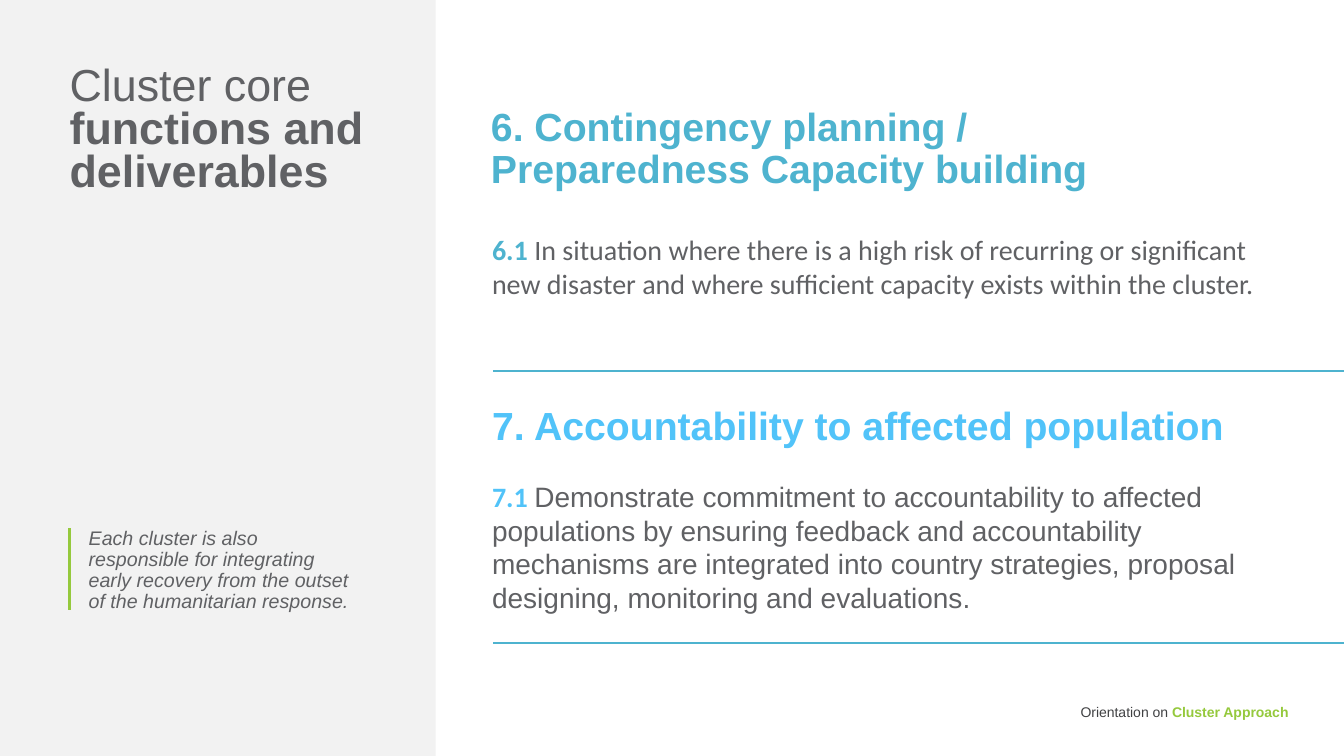
from lxml.etree import SubElement
from pptx import Presentation
from pptx.dml.color import RGBColor
from pptx.enum.shapes import MSO_CONNECTOR as Connector, MSO_SHAPE as Shape
from pptx.enum.text import MSO_ANCHOR as Anchor, MSO_AUTO_SIZE as AutoSize, PP_ALIGN as Align
from pptx.oxml.ns import qn
from pptx.util import Inches, Pt

TEAL, SKY, GREEN, GRAY, DARK = "4EB3CF", "51C3F9", "95C93D", "606164", "404143"


def color(value):
    return RGBColor.from_string(value)


def write(box, place, runs, size, spacing=1.0, anchor=Anchor.TOP,
          align=Align.LEFT, insets=(0, 0.05, 0.1, 0.05), wrap=True):
    box.left, box.top, box.width, box.height = [Inches(length) for length in place]
    frame = box.text_frame
    frame.auto_size = AutoSize.NONE
    frame.word_wrap = wrap
    frame.vertical_anchor = anchor
    frame.margin_left, frame.margin_top, frame.margin_right, frame.margin_bottom = [
        Inches(inset) for inset in insets]
    para = frame.paragraphs[0]
    para.alignment = align
    para.line_spacing = spacing
    para.space_before = Pt(0)
    for text, font, tint, bold, italic in runs:
        for index, line in enumerate(text.split("\n")):
            if index:
                para.add_line_break()
            if not line:
                continue
            span = para.add_run()
            span.text = line
            span.font.name = font
            span.font.size = Pt(size)
            span.font.color.rgb = color(tint)
            span.font.bold = bold
            span.font.italic = italic


deck = Presentation()
deck.slide_width, deck.slide_height = Inches(13.33), Inches(7.5)
page = deck.slides.add_slide(deck.slide_layouts[5])
title = page.shapes.title

panel = page.shapes.add_shape(Shape.RECTANGLE, 0, 0, Inches(4.32), Inches(7.5))
panel.shadow.inherit = False
panel.fill.solid()
panel.fill.fore_color.rgb = color("F2F2F2")
panel.line.fill.background()
title.element.addprevious(panel.element)

write(title, (0.69, 0.66, 3.37, 1.29), [
    ("Cluster core\n", "Arial", GRAY, False, False),
    ("functions and deliverables", "Arial", GRAY, True, False),
], 32, spacing=0.8, anchor=Anchor.MIDDLE)

quote = page.shapes.add_textbox(0, 0, 0, 0)
write(quote, (0.88, 5.19, 3.37, 1.04), [
    ("Each cluster is also\nresponsible for integrating\n"
     "early recovery from the outset\nof the humanitarian response.",
     "Arial", GRAY, False, True),
], 14, spacing=0.9)

sections = [
    ("6. Contingency planning /\nPreparedness Capacity building",
     (4.87, 1.02, 7.73, 0.96), True, "6.1 ",
     "In situation where there is a high risk of recurring or significant new disaster "
     "and where sufficient capacity exists within the cluster.",
     (4.88, 2.26, 7.72, 1.14), "Calibri", TEAL),
    ("7. Accountability to affected population",
     (4.88, 3.98, 7.45, 0.59), False, "7.1 ",
     "Demonstrate commitment to accountability to affected populations by ensuring feedback "
     "and accountability mechanisms are integrated into country strategies, proposal "
     "designing, monitoring and evaluations.",
     (4.88, 4.71, 7.72, 1.28), "Arial", SKY),
]
for heading, heading_place, wrap, number, body, body_place, font, tint in sections:
    heading_box = page.shapes.add_textbox(0, 0, 0, 0)
    write(heading_box, heading_place, [(heading, "Arial", tint, True, False)],
          28, spacing=0.9, wrap=wrap)
    body_box = page.shapes.add_textbox(0, 0, 0, 0)
    write(body_box, body_place, [
        (number, "Calibri", tint, True, False),
        (body, font, GRAY, False, False),
    ], 20)

footer = page.shapes.add_textbox(0, 0, 0, 0)
write(footer, (9.91, 6.91, 2.87, 0.26), [
    ("Orientation on ", "Arial", DARK, False, False),
    ("Cluster Approach", "Arial", GREEN, True, False),
], 10, spacing=0.8, align=Align.RIGHT, insets=(0.1, 0.1, 0, 0.1))

rules = [
    (4.89, 3.68, 13.33, 3.68, TEAL),
    (4.89, 6.38, 13.33, 6.38, TEAL),
    (0.69, 6.05, 0.69, 5.24, GREEN),
]
for *ends, tint in rules:
    rule = page.shapes.add_connector(Connector.STRAIGHT, *[Inches(end) for end in ends])
    rule.line.color.rgb = color(tint)
    rule.line.width = Pt(1.5)
    SubElement(rule.element.spPr, qn("a:effectLst"))

deck.save("out.pptx")
